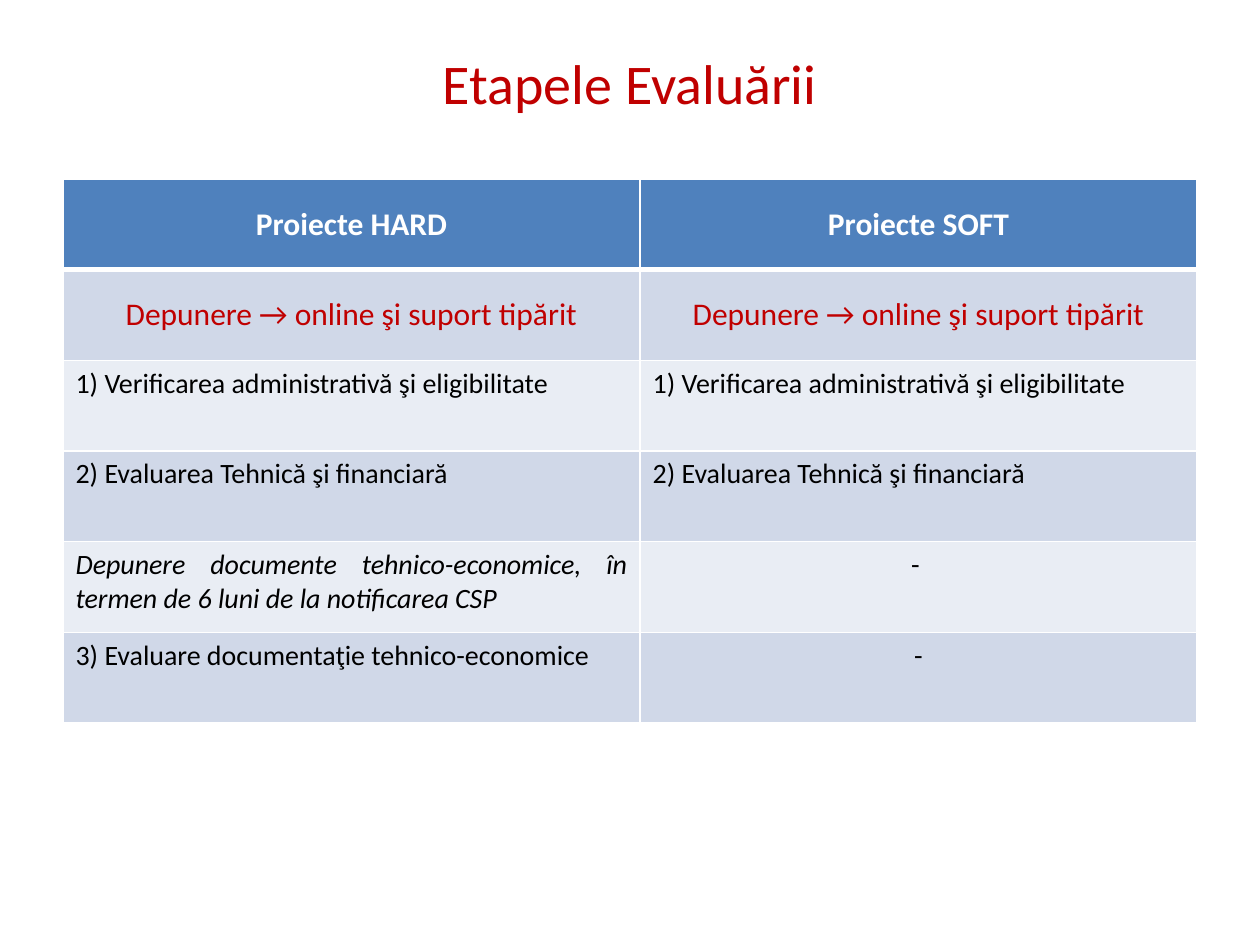
"""Build the slide that lists the evaluation stages of HARD and SOFT projects."""
from lxml import etree
from pptx import Presentation
from pptx.dml.color import RGBColor
from pptx.enum.text import MSO_ANCHOR, PP_ALIGN
from pptx.oxml.ns import qn
from pptx.util import Inches, Pt

CENTER, JUSTIFY = PP_ALIGN.CENTER, PP_ALIGN.JUSTIFY
TOP, MIDDLE = MSO_ANCHOR.TOP, MSO_ANCHOR.MIDDLE
RED = RGBColor(0xC0, 0x00, 0x00)
BLUE = RGBColor(0x4F, 0x81, 0xBD)
BAND = RGBColor(0xD0, 0xD8, 0xE8)
PALE = RGBColor(0xE9, 0xED, 0xF4)
WHITE = RGBColor(0xFF, 0xFF, 0xFF)
BLACK = RGBColor(0x00, 0x00, 0x00)


def write(frame, text, size=16, color=BLACK, align=JUSTIFY, bold=False, italic=False):
    para = frame.paragraphs[0]
    para.alignment = align
    run = para.add_run()
    run.text = text
    font = run.font
    font.name, font.size = "Calibri", Pt(size)
    font.bold, font.italic = bold, italic
    font.color.rgb = color


def border(cell, side, width):
    line = etree.SubElement(cell._tc.get_or_add_tcPr(), qn(f"a:ln{side}"), w=str(Pt(width)))
    fill = etree.SubElement(line, qn("a:solidFill"))
    etree.SubElement(fill, qn("a:srgbClr"), val=str(WHITE))


deck = Presentation()
deck.slide_width, deck.slide_height = Inches(10), Inches(7.5)
slide = deck.slides.add_slide(deck.slide_layouts[6])

title = slide.shapes.add_textbox(Inches(0.5), Inches(0.3), Inches(9), Inches(0.7)).text_frame
title.word_wrap = True
title.vertical_anchor = MIDDLE
write(title, "Etapele Evaluării", size=32, color=RED, align=CENTER)

submit = "Depunere → online şi suport tipărit"
check = "1) Verificarea administrativă şi eligibilitate"
review = "2) Evaluarea Tehnică şi financiară"
papers = "Depunere documente tehnico-economice, în termen de 6 luni de la notificarea CSP"
final = "3) Evaluare documentaţie tehnico-economice"

head = dict(size=18, color=WHITE, align=CENTER, bold=True)
lead = dict(size=18, color=RED, align=CENTER)
mid = dict(align=CENTER)
rows = [
    [("Proiecte HARD", head), ("Proiecte SOFT", head)],
    [(submit, lead), (submit, lead)],
    [(check, {}), (check, {})],
    [(review, {}), (review, {})],
    [(papers, dict(italic=True)), ("- ", mid)],
    [(final, {}), ("-", mid)],
]

table = slide.shapes.add_table(
    len(rows), 2, Inches(0.5), Inches(1.42), Inches(9), Inches(4.33)
).table
for col, width in zip(table.columns, (4.58, 4.42)):
    col.width = Inches(width)

for r, row in enumerate(rows):
    table.rows[r].height = Inches(0.72)
    for c, (text, style) in enumerate(row):
        cell = table.cell(r, c)
        for side in "LRTB":
            thick = (r, side) in ((0, "B"), (1, "T"))
            border(cell, side, 3 if thick else 1)
        cell.fill.solid()
        cell.fill.fore_color.rgb = BLUE if r == 0 else BAND if r % 2 else PALE
        cell.vertical_anchor = MIDDLE if r < 2 else TOP
        write(cell.text_frame, text, **style)

deck.save("out.pptx")
